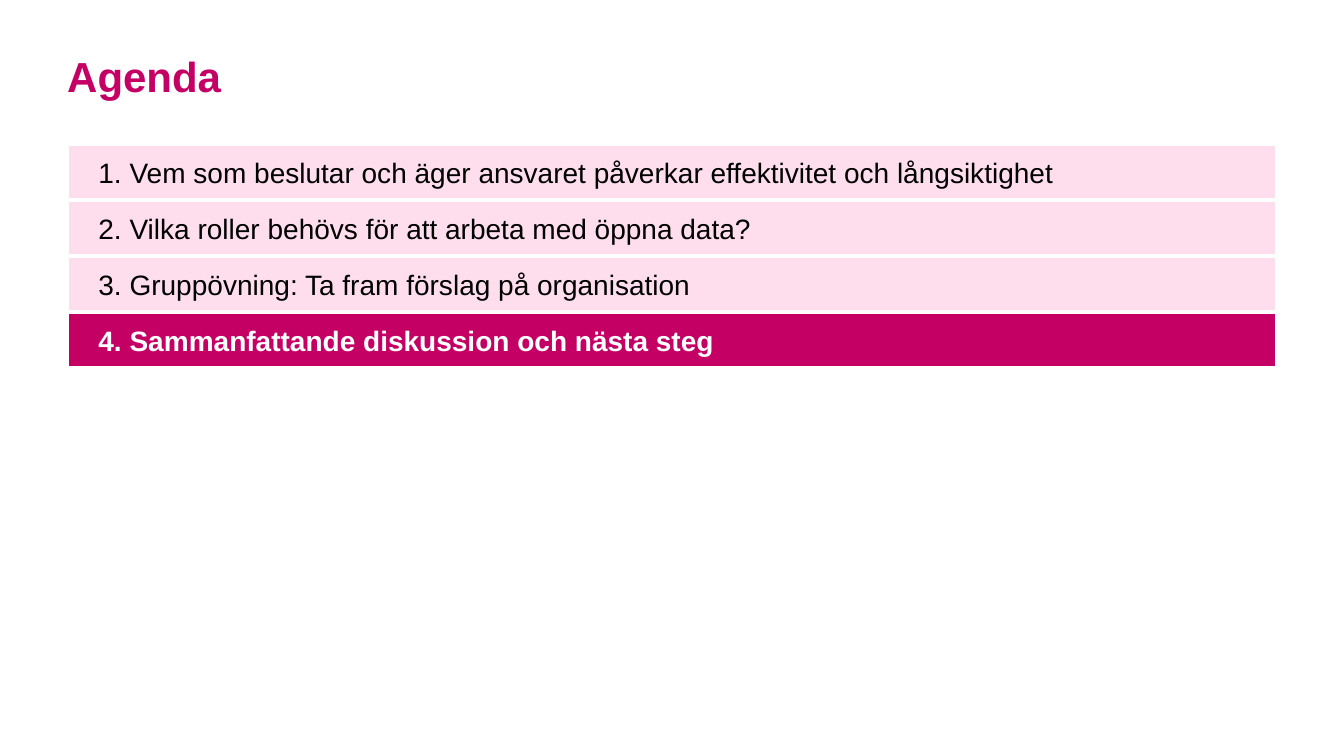
from pptx import Presentation
from pptx.dml.color import RGBColor
from pptx.enum.shapes import MSO_SHAPE
from pptx.enum.text import MSO_ANCHOR, PP_ALIGN
from pptx.util import Inches, Pt

COLORS = {
    "accent": "C40064",
    "tint": "FEDEED",
    "black": "000000",
    "white": "FFFFFF",
}
AGENDA = [
    "1. Vem som beslutar och äger ansvaret påverkar effektivitet och långsiktighet",
    "2. Vilka roller behövs för att arbeta med öppna data?",
    "3. Gruppövning: Ta fram förslag på organisation",
    "4. Sammanfattande diskussion och nästa steg",
]
CURRENT = 3


def color(name):
    return RGBColor.from_string(COLORS[name])


def format_text(box, size, bold, color_name, frame_format):
    frame = box.text_frame
    for name, value in frame_format.items():
        setattr(frame, name, value)
    paragraph = frame.paragraphs[0]
    paragraph.alignment = PP_ALIGN.LEFT
    font_format = {"name": "Arial", "size": Pt(size), "bold": bold}
    for name, value in font_format.items():
        setattr(paragraph.font, name, value)
    paragraph.font.color.rgb = color(color_name)


deck = Presentation()
deck.slide_width = Inches(13.33)
deck.slide_height = Inches(7.5)
page = deck.slides.add_slide(deck.slide_layouts[5])

left = deck.slide_width // 20
width = deck.slide_width - 2 * left
first_row = Inches(1.43)
row_height = Inches(0.555)

title = page.shapes.title
title_place = {"left": left, "top": Inches(0.5), "width": width, "height": Inches(0.91)}
for name, value in title_place.items():
    setattr(title, name, value)
title.text_frame.text = "Agenda"
title_frame = {
    "margin_left": 0,
    "margin_top": 0,
    "margin_right": 0,
    "margin_bottom": 0,
    "vertical_anchor": MSO_ANCHOR.TOP,
    "word_wrap": True,
}
format_text(title, 30, True, "accent", title_frame)

row_frame = {
    "margin_left": Inches(0.31),
    "margin_top": Inches(0.11),
    "margin_right": 0,
    "margin_bottom": Inches(0.11),
    "vertical_anchor": MSO_ANCHOR.MIDDLE,
    "word_wrap": True,
}
for row, topic in enumerate(AGENDA):
    active = row == CURRENT
    box = page.shapes.add_shape(
        MSO_SHAPE.RECTANGLE, left, first_row + row * row_height, width, row_height
    )
    box.shadow.inherit = False
    box.fill.solid()
    box.fill.fore_color.rgb = color("accent" if active else "tint")
    box.line.color.rgb = color("white")
    box.line.width = Pt(3)
    box.text_frame.text = topic
    format_text(box, 20, active, "white" if active else "black", row_frame)

deck.save("out.pptx")
